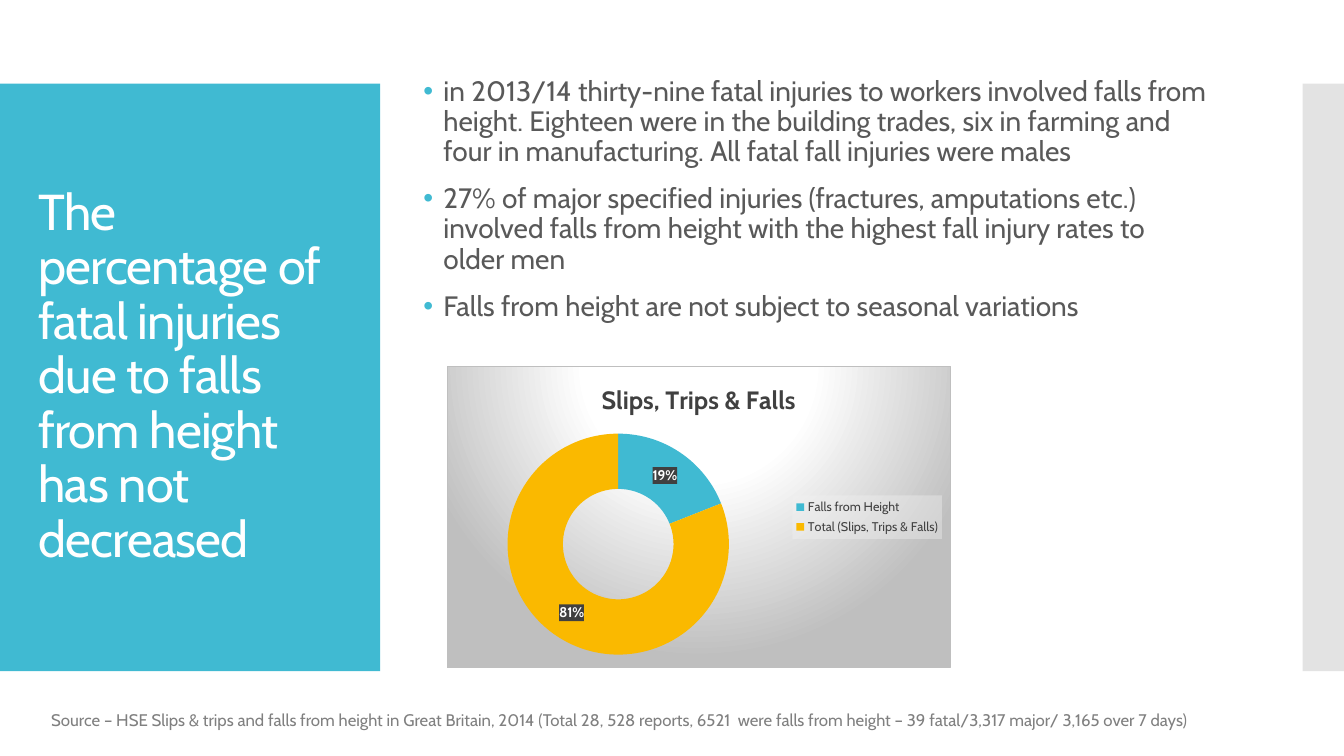
from lxml import etree
from pptx import Presentation
from pptx.chart.data import CategoryChartData
from pptx.dml.color import RGBColor
from pptx.enum.chart import XL_CHART_TYPE, XL_LEGEND_POSITION
from pptx.enum.shapes import MSO_SHAPE
from pptx.enum.text import MSO_ANCHOR, PP_ALIGN
from pptx.oxml import parse_xml
from pptx.oxml.ns import qn
from pptx.util import Inches, Pt

DOUGHNUT = XL_CHART_TYPE.DOUGHNUT
LEGEND_RIGHT = XL_LEGEND_POSITION.RIGHT
RECTANGLE = MSO_SHAPE.RECTANGLE
MIDDLE = MSO_ANCHOR.MIDDLE
LEFT = PP_ALIGN.LEFT

FONT = "Cabin"
COLORS = {
    "teal": "40BAD2", "amber": "FAB900", "white": "FFFFFF", "strip": "E3E3E3",
    "body": "595959", "source": "808080", "dark": "404040", "edge": "BFBFBF",
    "legend": "F2F2F2", "black": "000000",
}
TITLE = "The percentage of fatal injuries due to falls from height has not decreased"
BULLETS = [
    "in 2013/14 thirty-nine fatal injuries to workers involved falls from height. "
    "Eighteen were in the building trades, six in farming and four in manufacturing. "
    "All fatal fall injuries were males",
    "27% of major specified injuries (fractures, amputations etc.) involved falls "
    "from height with the highest fall injury rates to older men",
    "Falls from height are not subject to seasonal variations",
]
SOURCE = ("Source – HSE Slips & trips and falls from height in Great Britain, 2014 "
          "(Total 28, 528 reports, 6521  were falls from height – 39 fatal/3,317 major/ "
          "3,165 over 7 days)")
CHART_TITLE = "Slips, Trips & Falls"
SLICES = [("Falls from Height", 19, "teal"), ("Total (Slips, Trips & Falls)", 81, "amber")]
RING_LAYOUT = {"x": 0.12, "y": 0.22, "w": 0.44, "h": 0.74}

NAMESPACES = ('xmlns:c="http://schemas.openxmlformats.org/drawingml/2006/chart" '
              'xmlns:a="http://schemas.openxmlformats.org/drawingml/2006/main"')


def rgb(name):
    return RGBColor.from_string(COLORS[name])


def style_font(font, size, color, bold=False):
    font.name, font.size, font.bold = FONT, Pt(size), bold
    font.color.rgb = rgb(color)


def add_panel(slide, left, width, color):
    panel = slide.shapes.add_shape(RECTANGLE, Inches(left), Inches(0.83),
                                   Inches(width), Inches(5.83))
    panel.shadow.inherit = False
    panel.fill.solid()
    panel.fill.fore_color.rgb = rgb(color)
    panel.line.fill.background()


def add_text(slide, lines, left, top, width, height, size, color):
    box = slide.shapes.add_textbox(Inches(left), Inches(top), Inches(width), Inches(height))
    frame = box.text_frame
    frame.word_wrap = True
    for index, line in enumerate(lines):
        para = frame.paragraphs[0] if index == 0 else frame.add_paragraph()
        para.text = line
        style_font(para.runs[0].font, size, color)
    return frame


def add_bullet(para):
    para.line_spacing, para.space_before = 0.9, Pt(12)
    properties = para._p.get_or_add_pPr()
    properties.set("marL", str(Inches(0.2)))
    properties.set("indent", str(-Inches(0.2)))
    color = etree.SubElement(properties, qn("a:buClr"))
    etree.SubElement(color, qn("a:srgbClr"), val=COLORS["teal"])
    etree.SubElement(properties, qn("a:buFont"), typeface="Arial")
    etree.SubElement(properties, qn("a:buChar"), char="•")


def chart_fill(content):
    return parse_xml(f"<c:spPr {NAMESPACES}>{content}</c:spPr>")


def solid_fill(color, opacity):
    return chart_fill(f'<a:solidFill><a:srgbClr val="{COLORS[color]}">'
                      f'<a:alpha val="{opacity * 1000}"/></a:srgbClr></a:solidFill>')


def radial_fill():
    stops = "".join(f'<a:gs pos="{position * 1000}"><a:srgbClr val="{COLORS[color]}"/></a:gs>'
                    for position, color in [(0, "white"), (39, "white"), (100, "edge")])
    return chart_fill(
        f'<a:gradFill><a:gsLst>{stops}</a:gsLst><a:path path="circle">'
        '<a:fillToRect l="50000" t="-80000" r="50000" b="180000"/></a:path></a:gradFill>'
        f'<a:ln w="{Pt(0.75)}"><a:solidFill><a:srgbClr val="{COLORS["edge"]}"/>'
        '</a:solidFill></a:ln>')


def place_ring(chart):
    plot_area = chart.element.find(".//" + qn("c:plotArea"))
    for old in plot_area.findall(qn("c:layout")):
        plot_area.remove(old)
    sizes = "".join(f'<c:{key} val="{value}"/>' for key, value in RING_LAYOUT.items())
    plot_area.insert(0, parse_xml(
        f'<c:layout {NAMESPACES}><c:manualLayout><c:layoutTarget val="inner"/>'
        f'<c:xMode val="edge"/><c:yMode val="edge"/>{sizes}</c:manualLayout></c:layout>'))


def add_doughnut(slide):
    data = CategoryChartData()
    data.categories = [name for name, _, _ in SLICES]
    data.add_series("Series 1", [value for _, value, _ in SLICES])
    chart = slide.shapes.add_chart(DOUGHNUT, Inches(4.43), Inches(3.63),
                                   Inches(5), Inches(3), data).chart
    style_font(chart.font, 10, "black")
    chart.element.find(qn("c:chart")).addnext(radial_fill())
    place_ring(chart)

    heading = chart.chart_title.text_frame
    heading.text = CHART_TITLE
    style_font(heading.paragraphs[0].runs[0].font, 18, "dark", bold=True)
    chart.chart_title.include_in_layout = False

    chart.has_legend = True
    legend = chart.legend
    legend.position = LEGEND_RIGHT
    legend.include_in_layout = False
    style_font(legend.font, 9, "dark")
    legend.font._element.getparent().getparent().getparent().addprevious(
        solid_fill("legend", 39))

    plot = chart.plots[0]
    plot.vary_by_categories = True
    for index, (_, _, color) in enumerate(SLICES):
        fill = plot.series[0].points[index].format.fill
        fill.solid()
        fill.fore_color.rgb = rgb(color)

    plot.has_data_labels = True
    labels = plot.data_labels
    labels.show_percentage, labels.show_value = True, False
    labels.number_format, labels.number_format_is_linked = "0%", False
    style_font(labels.font, 10, "white", bold=True)
    labels._element.find(qn("c:txPr")).addprevious(solid_fill("dark", 100))


def main():
    deck = Presentation()
    deck.slide_width, deck.slide_height = Inches(13.33), Inches(7.5)
    slide = deck.slides.add_slide(deck.slide_layouts[5])
    add_panel(slide, 0, 3.77, "teal")
    add_panel(slide, 12.92, 0.41, "strip")

    title = slide.shapes.title
    title.element.getparent().append(title.element)  # bring in front of the panel
    title.left, title.top = Inches(0.28), Inches(1.23)
    title.width, title.height = Inches(3.22), Inches(5.03)
    title.text_frame.text = TITLE
    title.text_frame.word_wrap = True
    title.text_frame.vertical_anchor = MIDDLE
    para = title.text_frame.paragraphs[0]
    para.alignment, para.line_spacing = LEFT, 0.9
    style_font(para.runs[0].font, 36, "white")
    para.runs[0].font._element.set("spc", "-60")

    body = add_text(slide, BULLETS, 4.1, 0.47, 8, 3.02, 20, "body")
    body.vertical_anchor = MIDDLE
    for para in body.paragraphs:
        add_bullet(para)
    add_text(slide, [SOURCE], 0.41, 6.99, 12.74, 0.3, 12, "source")
    add_doughnut(slide)
    deck.save("out.pptx")


if __name__ == "__main__":
    main()
